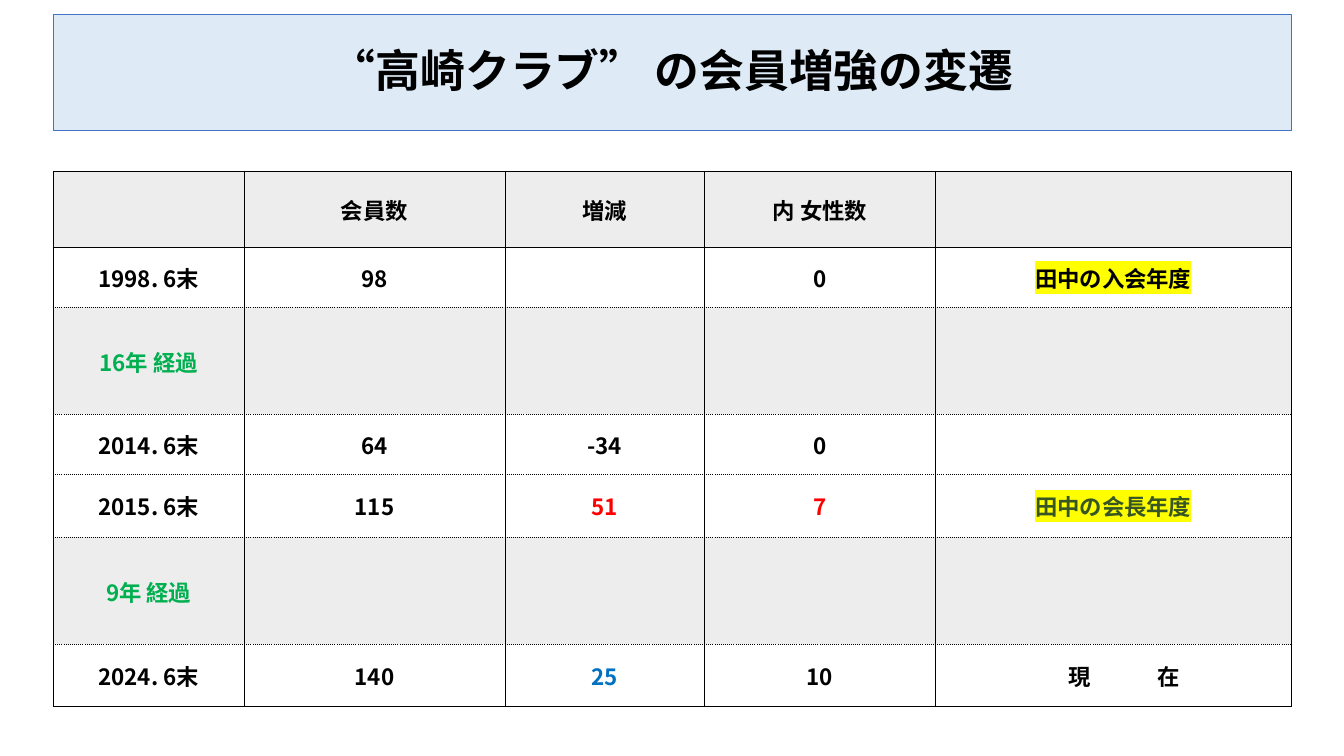
from lxml import etree
from pptx import Presentation
from pptx.dml.color import RGBColor
from pptx.enum.text import MSO_ANCHOR, PP_ALIGN
from pptx.oxml.ns import qn
from pptx.util import Pt

CENTER = PP_ALIGN.CENTER
MIDDLE = MSO_ANCHOR.MIDDLE

BLACK = RGBColor(0x00, 0x00, 0x00)
GREEN = RGBColor(0x00, 0xB0, 0x50)
DARK_GREEN = RGBColor(0x37, 0x56, 0x23)
RED = RGBColor(0xFF, 0x00, 0x00)
BLUE = RGBColor(0x00, 0x70, 0xC0)
YELLOW = RGBColor(0xFF, 0xFF, 0x00)
GREY = RGBColor(0xED, 0xED, 0xED)
TITLE_FILL = RGBColor(0xDE, 0xEB, 0xF7)
TITLE_LINE = RGBColor(0x44, 0x72, 0xC4)

LEFT, WIDTH = 38.16, 884.16
COLUMN_WIDTHS = [136.1, 186.5, 142.5, 164.9, 112.3, 62.6, 79.3]
ROW_HEIGHTS = [54, 43.2, 38.2, 38.2, 42.5, 45.4, 38.2, 38.2, 44.6]
GREY_ROWS = (0, 2, 3, 6, 7)
ELAPSED_ROWS = (2, 6)
NOTE_ROWS = (1, 5, 8)
NOTE_COLUMN = 4

ROWS = [
    ["", "会員数", "増減", "内 女性数"],
    ["1998. 6末", "98", "", "0", "田中の入会年度"],
    ["16年 経過"],
    [],
    ["2014. 6末", "64", "-34", "0"],
    ["2015. 6末", "115", "51", "7", "田中の会長年度"],
    ["9年 経過"],
    [],
    ["2024. 6末", "140", "25", "10", "現　在"],
]
TEXT_COLORS = {(2, 0): GREEN, (6, 0): GREEN, (5, 2): RED, (5, 3): RED,
               (5, 4): DARK_GREEN, (8, 2): BLUE}
HIGHLIGHTED = ((1, 4), (5, 4))
SPREAD_CELL = (8, 4)
SPREAD = 16


class SlideBuilder:
    """Holds the slide and its text style, and adds the title and table."""

    def __init__(self, slide):
        self.slide = slide
        self.east_asian_font = "Noto Sans CJK JP"

    def format_text(self, paragraph, size, color, latin_font, highlight=None):
        paragraph.alignment = CENTER
        for run in paragraph.runs:
            font = run.font
            font.size, font.bold = Pt(size), True
            font.color.rgb = color
            properties = run._r.get_or_add_rPr()
            if highlight is not None:
                marker = etree.SubElement(properties, qn("a:highlight"))
                etree.SubElement(marker, qn("a:srgbClr"), val=str(highlight))
            font.name = latin_font
            etree.SubElement(properties, qn("a:ea"), typeface=self.east_asian_font)

    def title(self, text, top, height):
        shape = self.slide.shapes.title
        shape.left, shape.top = Pt(LEFT), Pt(top)
        shape.width, shape.height = Pt(WIDTH), Pt(height)
        shape.fill.solid()
        shape.fill.fore_color.rgb = TITLE_FILL
        shape.line.color.rgb = TITLE_LINE
        shape.line.width = Pt(0.75)
        shape.text_frame.text = text
        shape.text_frame.vertical_anchor = MIDDLE
        paragraph = shape.text_frame.paragraphs[0]
        paragraph.line_spacing = 0.9
        self.format_text(paragraph, 32, BLACK, "Arial")

    def border(self, cell, side, dash):
        properties = cell._tc.get_or_add_tcPr()
        line = etree.SubElement(properties, qn("a:ln" + side), w=str(Pt(0.5)))
        if dash is None:
            etree.SubElement(line, qn("a:noFill"))
            return
        fill = etree.SubElement(line, qn("a:solidFill"))
        etree.SubElement(fill, qn("a:srgbClr"), val=str(BLACK))
        etree.SubElement(line, qn("a:prstDash"), val=dash)

    def cell_borders(self, cell, row, column):
        def vertical(edge):
            return "solid" if edge <= NOTE_COLUMN or edge == len(COLUMN_WIDTHS) else None

        def horizontal(edge):
            if edge - 1 in ELAPSED_ROWS:
                return None
            return "solid" if edge in (0, 1, len(ROWS)) else "dot"

        self.border(cell, "L", vertical(column))
        self.border(cell, "R", vertical(column + cell.span_width))
        self.border(cell, "T", horizontal(row))
        self.border(cell, "B", horizontal(row + cell.span_height))

    def cell(self, cell, row, column):
        self.cell_borders(cell, row, column)
        if row in GREY_ROWS:
            cell.fill.solid()
            cell.fill.fore_color.rgb = GREY
        else:
            cell.fill.background()
        cell.margin_left = cell.margin_right = cell.margin_top = Pt(0.72)
        cell.margin_bottom = Pt(0)
        cell.vertical_anchor = MIDDLE
        if column >= len(ROWS[row]) or not ROWS[row][column]:
            return
        place = (row, column)
        cell.text_frame.text = ROWS[row][column]
        paragraph = cell.text_frame.paragraphs[0]
        self.format_text(paragraph, 16, TEXT_COLORS.get(place, BLACK),
                         self.east_asian_font,
                         YELLOW if place in HIGHLIGHTED else None)
        if place == SPREAD_CELL:
            paragraph.runs[0].font._element.set("spc", str(SPREAD * 100))
            cell.margin_left = Pt(SPREAD)

    def table(self, top):
        frame = self.slide.shapes.add_table(
            len(ROWS), len(COLUMN_WIDTHS), Pt(LEFT), Pt(top),
            Pt(WIDTH), Pt(sum(ROW_HEIGHTS)))
        table = frame.table
        table.first_row = table.horz_banding = False
        for column, width in zip(table.columns, COLUMN_WIDTHS):
            column.width = Pt(width)
        for row, height in zip(table.rows, ROW_HEIGHTS):
            row.height = Pt(height)
        for row in ELAPSED_ROWS:
            table.cell(row, 0).merge(table.cell(row + 1, 0))
        for row in NOTE_ROWS:
            table.cell(row, NOTE_COLUMN).merge(table.cell(row, len(COLUMN_WIDTHS) - 1))
        for row in range(len(ROWS)):
            for column in range(len(COLUMN_WIDTHS)):
                self.cell(table.cell(row, column), row, column)


def main():
    presentation = Presentation()
    presentation.slide_width, presentation.slide_height = Pt(960), Pt(540)
    slide = presentation.slides.add_slide(presentation.slide_layouts[5])
    builder = SlideBuilder(slide)
    builder.title("“高崎クラブ” の会員増強の変遷", 10.5, 83)
    builder.table(122.4)
    presentation.save("out.pptx")


if __name__ == "__main__":
    main()
